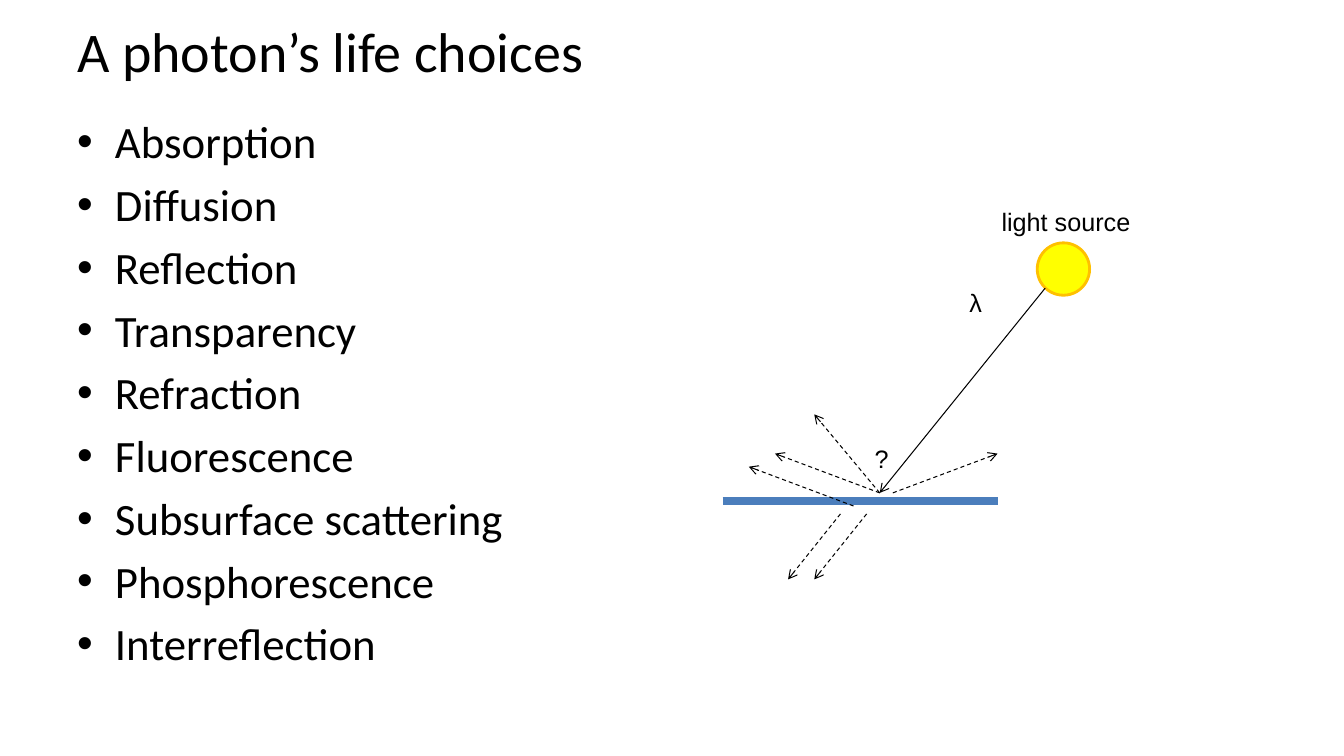
"""Build the slide on what can happen to a photon at a surface."""
from dataclasses import dataclass

from lxml import etree
from pptx import Presentation
from pptx.dml.color import RGBColor
from pptx.enum.dml import MSO_LINE
from pptx.enum.shapes import MSO_CONNECTOR, MSO_SHAPE
from pptx.enum.text import MSO_ANCHOR, MSO_AUTO_SIZE, PP_ALIGN
from pptx.oxml.ns import qn
from pptx.util import Cm, Pt

STRAIGHT = MSO_CONNECTOR.STRAIGHT
OVAL = MSO_SHAPE.OVAL
DASH = MSO_LINE.DASH
LEFT = PP_ALIGN.LEFT
MIDDLE = MSO_ANCHOR.MIDDLE
GROW = MSO_AUTO_SIZE.SHAPE_TO_FIT_TEXT


@dataclass(frozen=True)
class Theme:
    ink: RGBColor = RGBColor(0x00, 0x00, 0x00)
    surface: RGBColor = RGBColor(0x4B, 0x7E, 0xBC)
    sun: RGBColor = RGBColor(0xFF, 0xFF, 0x00)
    sun_rim: RGBColor = RGBColor(0xFF, 0xC0, 0x00)
    text_font: str = "Calibri"
    label_font: str = "Arial"
    title_size: Pt = Pt(40)
    list_size: Pt = Pt(32)
    label_size: Pt = Pt(18)
    ray_width: Pt = Pt(0.75)
    rim_width: Pt = Pt(2)
    surface_width: Pt = Pt(6)


THEME = Theme()

CHOICES = [
    "Absorption", "Diffusion", "Reflection", "Transparency", "Refraction",
    "Fluorescence", "Subsurface scattering", "Phosphorescence", "Interreflection",
]

IMPACT = (22.17, 12.42)
MIRRORED = (-2.64, -0.99)
FORWARD = (2.64, -0.99)
TRANSMITTED = (-1.32, 1.65)

OUTGOING_RAYS = [
    ((22.5, 12.42), FORWARD),
    ((21.84, 12.95), TRANSMITTED),
    ((21.18, 12.95), TRANSMITTED),
    ((21.51, 12.75), MIRRORED),
]


def write(frame, text, *, size, font=THEME.text_font, color=THEME.ink, align=LEFT):
    """Fill a text frame, one paragraph per line of text."""
    frame.text = text
    for paragraph in frame.paragraphs:
        paragraph.alignment = align
        for run in paragraph.runs:
            run.font.size = size
            run.font.name = font
            run.font.color.rgb = color


def place(shape, left, top, width, height):
    """Move and size a shape, in centimetres."""
    shape.left, shape.top = Cm(left), Cm(top)
    shape.width, shape.height = Cm(width), Cm(height)


def add_line(shapes, start, end, *, color=THEME.ink, width=THEME.ray_width):
    """Draw a plain straight line without a shadow."""
    line = shapes.add_connector(STRAIGHT, *(Cm(value) for value in (*start, *end)))
    line.line.color.rgb = color
    line.line.width = width
    etree.SubElement(line._element.spPr, qn("a:effectLst"))
    return line


def add_ray(shapes, start, reach, *, dashed=True):
    """Draw a light ray as an arrow from start along reach."""
    end = (start[0] + reach[0], start[1] + reach[1])
    ray = add_line(shapes, start, end)
    if dashed:
        ray.line.dash_style = DASH
    etree.SubElement(ray.line._get_or_add_ln(), qn("a:tailEnd"), type="arrow")


def add_label(shapes, text, box, *, wrap=True):
    """Add a small diagram label."""
    label = shapes.add_textbox(*(Cm(value) for value in box))
    label.text_frame.word_wrap = wrap
    label.text_frame.auto_size = GROW
    write(label.text_frame, text, size=THEME.label_size, font=THEME.label_font)


def add_sun(shapes, box):
    """Draw the round light source."""
    sun = shapes.add_shape(OVAL, *(Cm(value) for value in box))
    sun.shadow.inherit = False
    sun.fill.solid()
    sun.fill.fore_color.rgb = THEME.sun
    sun.line.color.rgb = THEME.sun_rim
    sun.line.width = THEME.rim_width


def add_diagram(shapes):
    """Draw the light source, the surface and the possible rays."""
    add_line(shapes, (18.21, 12.62), (25.15, 12.62),
             color=THEME.surface, width=THEME.surface_width)
    add_sun(shapes, (26.14, 6.12, 1.32, 1.32))
    add_ray(shapes, (26.34, 7.26), (-4.17, 5.16), dashed=False)
    add_label(shapes, "λ", (24.18, 7.11, 0.84, 1.02), wrap=False)
    add_label(shapes, "light source", (24.99, 5.08, 3.81, 1.07))
    add_ray(shapes, IMPACT, (-1.65, -1.98))
    add_label(shapes, "?", (21.79, 11.05, 0.91, 1.02))
    add_ray(shapes, IMPACT, MIRRORED)
    for start, reach in OUTGOING_RAYS:
        add_ray(shapes, start, reach)


def main():
    """Create and save the presentation."""
    deck = Presentation()
    deck.slide_width, deck.slide_height = Cm(33.87), Cm(19.05)
    slide = deck.slides.add_slide(deck.slide_layouts[1])

    title, choices = slide.placeholders
    place(title, 1.69, 0, 30.48, 2.54)
    title.text_frame.vertical_anchor = MIDDLE
    write(title.text_frame, "A photon’s life choices", size=THEME.title_size)

    place(choices, 1.69, 2.75, 30.48, 14.27)
    write(choices.text_frame, "\n".join(CHOICES), size=THEME.list_size)

    add_diagram(slide.shapes.add_group_shape().shapes)
    deck.save("out.pptx")


if __name__ == "__main__":
    main()
